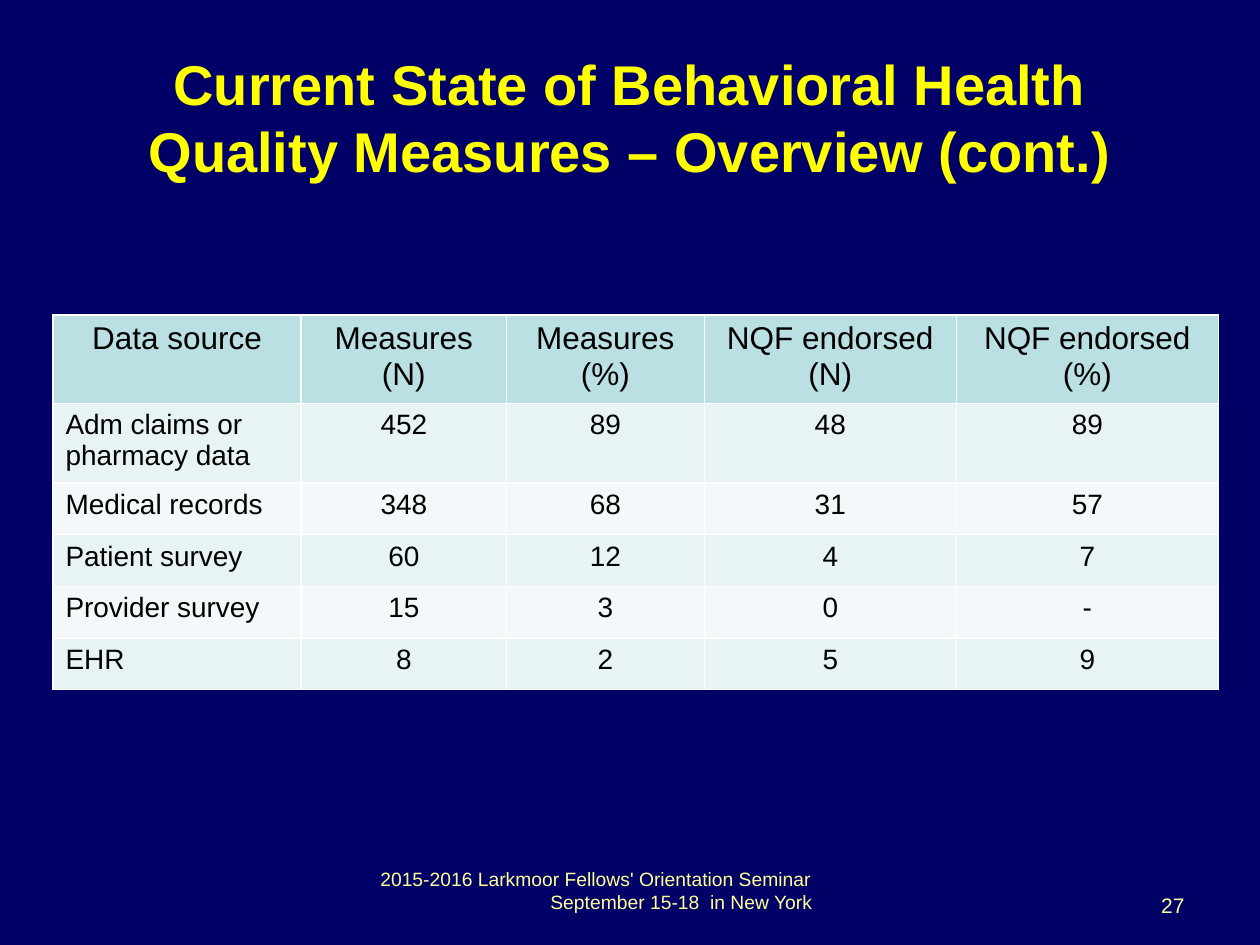
from lxml import etree
from pptx import Presentation
from pptx.dml.color import RGBColor
from pptx.enum import text
from pptx.oxml import ns
from pptx.util import Inches, Pt

FONT = "Arial"
HEADINGS = ["Data source", "Measures (N)", "Measures (%)", "NQF endorsed (N)", "NQF endorsed (%)"]
SOURCES = [
    ["Adm claims or pharmacy data", "452", "89", "48", "89"],
    ["Medical records", "348", "68", "31", "57"],
    ["Patient survey", "60", "12", "4", "7"],
    ["Provider survey", "15", "3", "0", "-"],
    ["EHR", "8", "2", "5", "9"],
]
COLUMN_WIDTHS = [1.97, 1.63, 1.57, 2, 2.08]
ROW_HEIGHTS = [0.66, 0.59, 0.41, 0.41, 0.41, 0.41]
LEFT, CENTER, RIGHT = text.PP_ALIGN.LEFT, text.PP_ALIGN.CENTER, text.PP_ALIGN.RIGHT


def color(value):
    return RGBColor.from_string(value)


def style_paragraph(paragraph, size, hue, align, bold=False):
    paragraph.alignment = align
    for run in paragraph.runs:
        run.font.name = FONT
        run.font.size = Pt(size)
        run.font.bold = bold
        run.font.color.rgb = color(hue)


def add_text(slide, bounds, wording, size, hue, align, anchor, bold=False):
    frame = slide.shapes.add_textbox(*map(Inches, bounds)).text_frame
    frame.word_wrap = True
    frame.vertical_anchor = anchor
    frame.text = wording
    for paragraph in frame.paragraphs:
        style_paragraph(paragraph, size, hue, align, bold)
    return frame


def add_border(cell, side):
    properties = cell._tc.get_or_add_tcPr()
    line = etree.SubElement(properties, ns.qn(f"a:ln{side}"), w=str(Pt(1)))
    fill = etree.SubElement(line, ns.qn("a:solidFill"))
    etree.SubElement(fill, ns.qn("a:srgbClr"), val="FFFFFF")


def style_cell(cell, row, column):
    heading = row == 0
    for side in "LRTB":
        add_border(cell, side)
    cell.fill.solid()
    band = "E7F3F4" if row % 2 else "F3F9FA"
    cell.fill.fore_color.rgb = color("BBE0E3" if heading else band)
    align = CENTER if heading or column else LEFT
    style_paragraph(cell.text_frame.paragraphs[0], 18 if heading else 16, "000000", align)


def add_measures_table(slide):
    rows = [HEADINGS] + SOURCES
    bounds = (0.42, 2.5, sum(COLUMN_WIDTHS), sum(ROW_HEIGHTS))
    table = slide.shapes.add_table(len(rows), len(HEADINGS), *map(Inches, bounds)).table
    for column, width in zip(table.columns, COLUMN_WIDTHS):
        column.width = Inches(width)
    for table_row, height in zip(table.rows, ROW_HEIGHTS):
        table_row.height = Inches(height)
    for row, values in enumerate(rows):
        for column, value in enumerate(values):
            cell = table.cell(row, column)
            cell.text = value
            style_cell(cell, row, column)


def main():
    deck = Presentation()
    deck.slide_width, deck.slide_height = Inches(10), Inches(7.5)
    slide = deck.slides.add_slide(deck.slide_layouts[6])
    slide.background.fill.solid()
    slide.background.fill.fore_color.rgb = color("000066")

    add_text(slide, (0.5, 0.3, 9, 1.25),
             "Current State of Behavioral Health Quality Measures – Overview (cont.)",
             32, "FFFF00", CENTER, text.MSO_ANCHOR.MIDDLE, bold=True)
    add_measures_table(slide)
    add_text(slide, (7.17, 6.83, 2.33, 0.5), "27", 12, "FFFF99", RIGHT, text.MSO_ANCHOR.BOTTOM)
    seminar = add_text(slide, (2.92, 6.83, 4.25, 0.52),
                       "2015-2016 Larkmoor Fellows' Orientation Seminar\nSeptember 15-18  in New York",
                       11, "FFFF99", LEFT, text.MSO_ANCHOR.TOP)
    dates = seminar.paragraphs[1]
    dates._p.get_or_add_pPr().set("marL", str(Inches(1.35)))

    deck.save("out.pptx")


if __name__ == "__main__":
    main()
